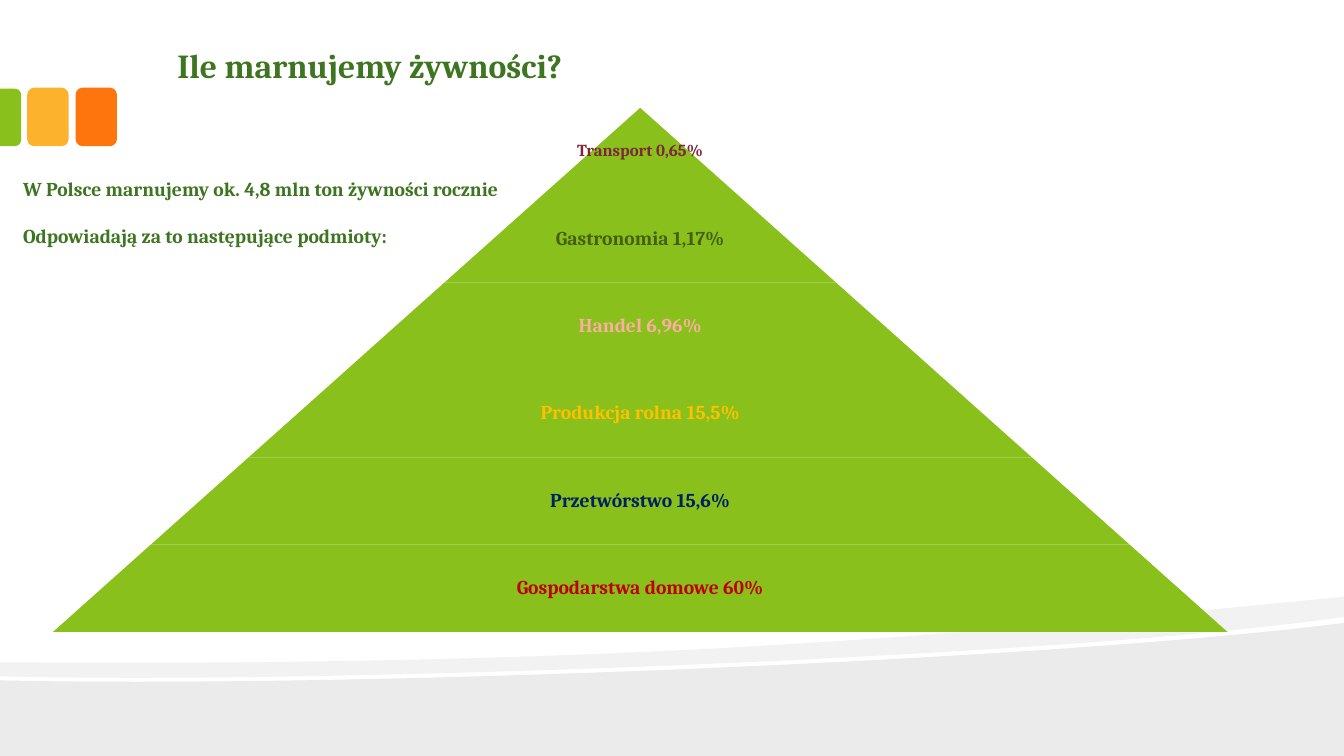
from dataclasses import dataclass

import lxml.etree
import pptx
import pptx.dml.color
import pptx.enum.shapes
import pptx.enum.text
import pptx.oxml.ns
import pptx.util

Inches = pptx.util.Inches
Shape = pptx.enum.shapes.MSO_SHAPE
Align = pptx.enum.text.PP_ALIGN
Anchor = pptx.enum.text.MSO_ANCHOR


@dataclass(frozen=True)
class Theme:
    font: str = "Cambria"
    title_size: int = 24
    body_size: int = 14
    small_size: int = 12
    heading: str = "3E7520"
    green: str = "89C01C"
    yellow: str = "FCB22C"
    orange: str = "FE750E"
    wave_front: str = "EBEBEB"
    wave_back: str = "F2F2F2"


THEME = Theme()

TIERS = [
    ("Transport 0,65%", "7C283A", THEME.small_size),
    ("Gastronomia 1,17%", "44600E", THEME.body_size),
    ("Handel 6,96%", "FAAF9F", THEME.body_size),
    ("Produkcja rolna 15,5%", "FFC000", THEME.body_size),
    ("Przetwórstwo 15,6%", "002060", THEME.body_size),
    ("Gospodarstwa domowe 60%", "C00000", THEME.body_size),
]
PYRAMID_CENTER, PYRAMID_TOP = 6.35, 1.07
PYRAMID_WIDTH, PYRAMID_HEIGHT = 11.65, 5.2
LABEL_SHARE = 0.65


def paint(shape, color):
    shape.shadow.inherit = False
    shape.fill.solid()
    shape.fill.fore_color.rgb = pptx.dml.color.RGBColor.from_string(color)
    shape.line.fill.background()


def add_block(slide, preset, left, top, width, height, color):
    block = slide.shapes.add_shape(
        preset, Inches(left), Inches(top), Inches(width), Inches(height))
    paint(block, color)
    return block


def add_run(paragraph, text, size, color):
    run = paragraph.add_run()
    run.text = text
    run.font.name = THEME.font
    run.font.size = pptx.util.Pt(size)
    run.font.bold = True
    run.font.color.rgb = pptx.dml.color.RGBColor.from_string(color)


def set_margins(frame, horizontal, vertical):
    frame.margin_left = frame.margin_right = Inches(horizontal)
    frame.margin_top = frame.margin_bottom = Inches(vertical)


def bend(wave, curve_starts):
    segments = wave.element.xpath(".//a:path/a:lnTo")
    for start in curve_starts:
        controls = segments[start:start + 3]
        bezier = lxml.etree.Element(pptx.oxml.ns.qn("a:cubicBezTo"))
        controls[0].addprevious(bezier)
        for control in controls:
            bezier.append(control[0])
            control.getparent().remove(control)


def add_wave(slide, outline, curve_starts, color):
    points = [(Inches(x), Inches(y)) for x, y in outline]
    builder = slide.shapes.build_freeform(*points[0])
    builder.add_line_segments(points[1:], close=True)
    wave = builder.convert_to_shape()
    bend(wave, curve_starts)
    paint(wave, color)


def add_waves(slide):
    front = [(13.33, 6.18), (13.33, 7.5), (0, 7.5), (0, 6.75),
             (3.52, 6.83), (10.42, 6.55), (13.33, 6.18)]
    back = [(13.33, 5.92), (13.33, 6.12),
            (12.55, 6.23), (11.49, 6.33), (10.29, 6.41),
            (6.98, 6.63), (2.58, 6.77), (0, 6.71), (0, 6.57),
            (6.52, 6.62), (9.71, 6.27), (13.33, 5.92)]
    add_wave(slide, front, (3,), THEME.wave_front)
    add_wave(slide, back, (1, 4, 8), THEME.wave_back)


def add_tabs(slide):
    for left, color in ((0.75, THEME.orange), (0.27, THEME.yellow)):
        add_block(slide, Shape.ROUNDED_RECTANGLE, left, 0.87, 0.41, 0.58, color)
    edge_tab = add_block(
        slide, Shape.ROUND_2_SAME_RECTANGLE, -0.18, 1.06, 0.57, 0.21, THEME.green)
    edge_tab.rotation = 90
    edge_tab.adjustments[0] = 0.29


def set_title(slide, text):
    title = slide.shapes.title
    title.left, title.top = Inches(1.63), Inches(0.17)
    title.width, title.height = Inches(10.37), Inches(0.75)
    frame = title.text_frame
    frame.vertical_anchor = Anchor.BOTTOM
    set_margins(frame, 0.13, 0.07)
    frame.paragraphs[0].alignment = Align.LEFT
    add_run(frame.paragraphs[0], text, THEME.title_size, THEME.heading)


def add_tier_label(slide, text, color, size, top, width, height):
    label = slide.shapes.add_textbox(
        Inches(PYRAMID_CENTER - width / 2), Inches(top), Inches(width), Inches(height))
    frame = label.text_frame
    frame.word_wrap = True
    frame.vertical_anchor = Anchor.MIDDLE
    set_margins(frame, 0.02, 0.02)
    paragraph = frame.paragraphs[0]
    paragraph.alignment = Align.CENTER
    paragraph.line_spacing = 0.9
    add_run(paragraph, text, size, color)


def add_pyramid(slide):
    height = PYRAMID_HEIGHT / len(TIERS)
    step = PYRAMID_WIDTH / len(TIERS)
    for index, (text, color, size) in enumerate(TIERS):
        top = PYRAMID_TOP + index * height
        width = step * (index + 1)
        tier = add_block(slide, Shape.TRAPEZOID, PYRAMID_CENTER - width / 2,
                         top, width, height, THEME.green)
        tier.adjustments[0] = step / 2 / height
        label_width = width * LABEL_SHARE if index else width
        add_tier_label(slide, text, color, size, top, label_width, height)


def add_statement(slide, text, top, width, height):
    statement = slide.shapes.add_textbox(
        Inches(0.13), Inches(top), Inches(width), Inches(height))
    frame = statement.text_frame
    frame.word_wrap = False
    frame.auto_size = pptx.enum.text.MSO_AUTO_SIZE.SHAPE_TO_FIT_TEXT
    add_run(frame.paragraphs[0], text, THEME.body_size, THEME.heading)


def main():
    presentation = pptx.Presentation()
    presentation.slide_width = Inches(13.33)
    presentation.slide_height = Inches(7.5)
    slide = presentation.slides.add_slide(presentation.slide_layouts[5])
    add_waves(slide)
    add_tabs(slide)
    set_title(slide, "Ile marnujemy żywności?")
    add_pyramid(slide)
    add_statement(
        slide, "W Polsce marnujemy ok. 4,8 mln ton żywności rocznie", 1.71, 5.19, 0.57)
    add_statement(
        slide, "Odpowiadają za to następujące podmioty:", 2.17, 4.05, 0.34)
    presentation.save("out.pptx")


if __name__ == "__main__":
    main()
